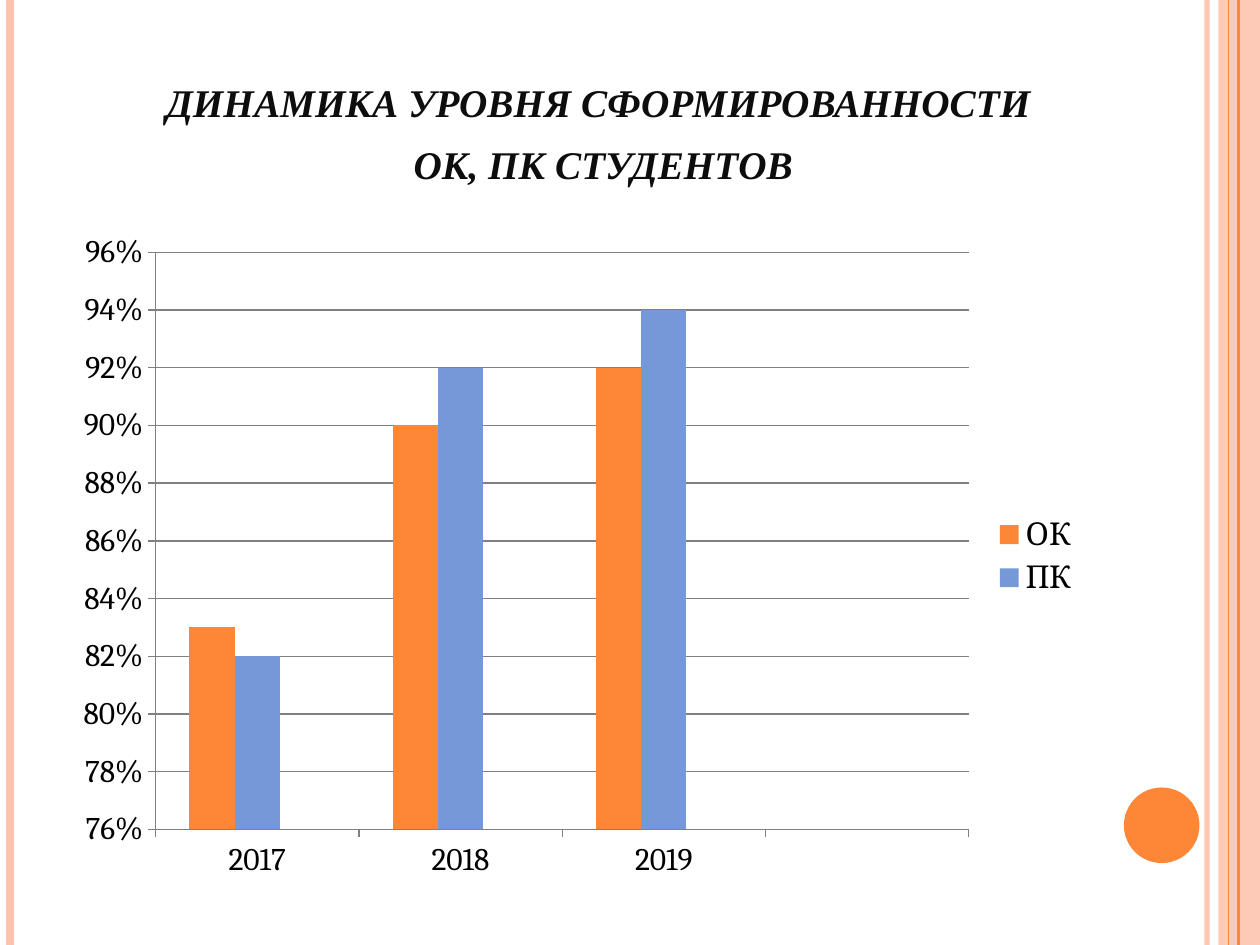
from lxml.etree import SubElement
from pptx import Presentation
from pptx.chart.data import CategoryChartData
from pptx.dml.color import RGBColor
from pptx.enum.chart import XL_CHART_TYPE, XL_LEGEND_POSITION, XL_TICK_MARK
from pptx.enum.shapes import MSO_CONNECTOR, MSO_SHAPE
from pptx.enum.text import MSO_ANCHOR, PP_ALIGN
from pptx.oxml.ns import qn
from pptx.util import Inches, Pt

PEACH = RGBColor(0xFE, 0xC3, 0xAE)
ORANGE = RGBColor(0xFE, 0x86, 0x37)
BLUE = RGBColor(0x75, 0x98, 0xD9)
RED = RGBColor(0xB3, 0x2C, 0x16)
GREY = RGBColor(0x80, 0x80, 0x80)
BLACK = RGBColor(0, 0, 0)
TITLE_COLOR = RGBColor(0x0D, 0x0D, 0x0D)

SLIDE_HEIGHT = 7.5
STRIPES = [
    (9.58, PEACH, 3, 93),
    (0.08, PEACH, 4.5, 100),
    (9.83, ORANGE, 1.5, 100),
    (9.75, ORANGE, 0.75, 100),
]
TITLE = "динамика уровня сформированности \vок, пк студентов"
TITLE_FONT = {"name": "Times New Roman", "size": Pt(28), "bold": True, "italic": True}
CHART_FONT = {"name": "Cambria", "size": Pt(18)}
YEARS = ["2017", "2018", "2019", ""]
SERIES = [
    ("ОК", [0.83, 0.9, 0.92, None], ORANGE),
    ("ПК", [0.82, 0.92, 0.94, None], BLUE),
    ("Series 3", [None] * 4, RED),
]
VALUE_SCALE = {"minimum_scale": 0.76, "maximum_scale": 0.96, "major_unit": 0.02}


def set_attributes(target, values):
    """Set each named attribute of the target."""
    for name, value in values.items():
        setattr(target, name, value)


def set_opacity(shape, percent):
    """Give the shape's only solid colour an opacity."""
    for color in shape._element.spPr.iter(qn("a:srgbClr")):
        SubElement(color, qn("a:alpha"), val=str(percent * 1000))


def add_stripe(slide, x, color, width, opacity):
    """Add a vertical line over the full slide height."""
    stripe = slide.shapes.add_connector(
        MSO_CONNECTOR.STRAIGHT, Inches(x), 0, Inches(x), Inches(SLIDE_HEIGHT))
    stripe.line.color.rgb = color
    stripe.line.width = Pt(width)
    SubElement(stripe._element.spPr, qn("a:effectLst"))
    if opacity < 100:
        set_opacity(stripe, opacity)


def add_filled_shape(slide, kind, box, color):
    """Add a preset shape with a plain fill and no outline."""
    shape = slide.shapes.add_shape(kind, *map(Inches, box))
    shape.shadow.inherit = False
    shape.fill.solid()
    shape.fill.fore_color.rgb = color
    shape.line.fill.background()
    return shape


def format_title(title):
    """Place the title and set it in small capitals."""
    set_attributes(title, {"left": Inches(0.91), "top": Inches(0.3),
                           "width": Inches(7.76), "height": Inches(1.25)})
    title.text_frame.text = TITLE
    title.text_frame.vertical_anchor = MSO_ANCHOR.BOTTOM
    paragraph = title.text_frame.paragraphs[0]
    set_attributes(paragraph, {"alignment": PP_ALIGN.CENTER, "line_spacing": 1.05})
    for run in paragraph.runs:
        set_attributes(run.font, TITLE_FONT)
        run.font.color.rgb = TITLE_COLOR
        run._r.get_or_add_rPr().set("cap", "small")


def hide_legend_entry(legend, index):
    """Leave one series out of the legend."""
    entry = legend._element.makeelement(qn("c:legendEntry"))
    SubElement(entry, qn("c:idx"), val=str(index))
    SubElement(entry, qn("c:delete"), val="1")
    legend._element.find(qn("c:legendPos")).addnext(entry)


def format_axes(chart):
    """Set the ticks, lines and value scale of both axes."""
    for axis in (chart.category_axis, chart.value_axis):
        axis.major_tick_mark = XL_TICK_MARK.OUTSIDE
        axis.format.line.color.rgb = GREY
    value_axis = chart.value_axis
    set_attributes(value_axis, VALUE_SCALE)
    set_attributes(value_axis.tick_labels,
                   {"number_format": "0%", "number_format_is_linked": False})
    value_axis.has_major_gridlines = True
    value_axis.major_gridlines.format.line.color.rgb = GREY


def add_column_chart(slide, box):
    """Add the chart of levels by year."""
    data = CategoryChartData(number_format="0%")
    data.categories = YEARS
    for name, values, _ in SERIES:
        data.add_series(name, values)
    chart = slide.shapes.add_chart(
        XL_CHART_TYPE.COLUMN_CLUSTERED, *map(Inches, box), data).chart
    set_attributes(chart, {"has_title": False, "has_legend": True})
    set_attributes(chart.font, CHART_FONT)
    chart.font.color.rgb = BLACK
    set_attributes(chart.legend, {"position": XL_LEGEND_POSITION.RIGHT,
                                  "include_in_layout": False})
    hide_legend_entry(chart.legend, len(SERIES) - 1)
    plot = chart.plots[0]
    set_attributes(plot, {"gap_width": 150, "overlap": 0, "vary_by_categories": False})
    for series, (_, _, color) in zip(plot.series, SERIES):
        series.format.fill.solid()
        series.format.fill.fore_color.rgb = color
    format_axes(chart)


def main():
    """Build and save the slide."""
    presentation = Presentation()
    set_attributes(presentation, {"slide_width": Inches(10),
                                  "slide_height": Inches(SLIDE_HEIGHT)})
    slide = presentation.slides.add_slide(presentation.slide_layouts[5])
    band = add_filled_shape(
        slide, MSO_SHAPE.RECTANGLE, (9.67, 0, 0.33, SLIDE_HEIGHT), PEACH)
    set_opacity(band, 87)
    for stripe in STRIPES:
        add_stripe(slide, *stripe)
    add_filled_shape(slide, MSO_SHAPE.OVAL, (8.92, 6.25, 0.6, 0.6), ORANGE)
    format_title(slide.shapes.title)
    add_column_chart(slide, (0.5, 1.75, 8.17, 5.33))
    presentation.save("out.pptx")


if __name__ == "__main__":
    main()
